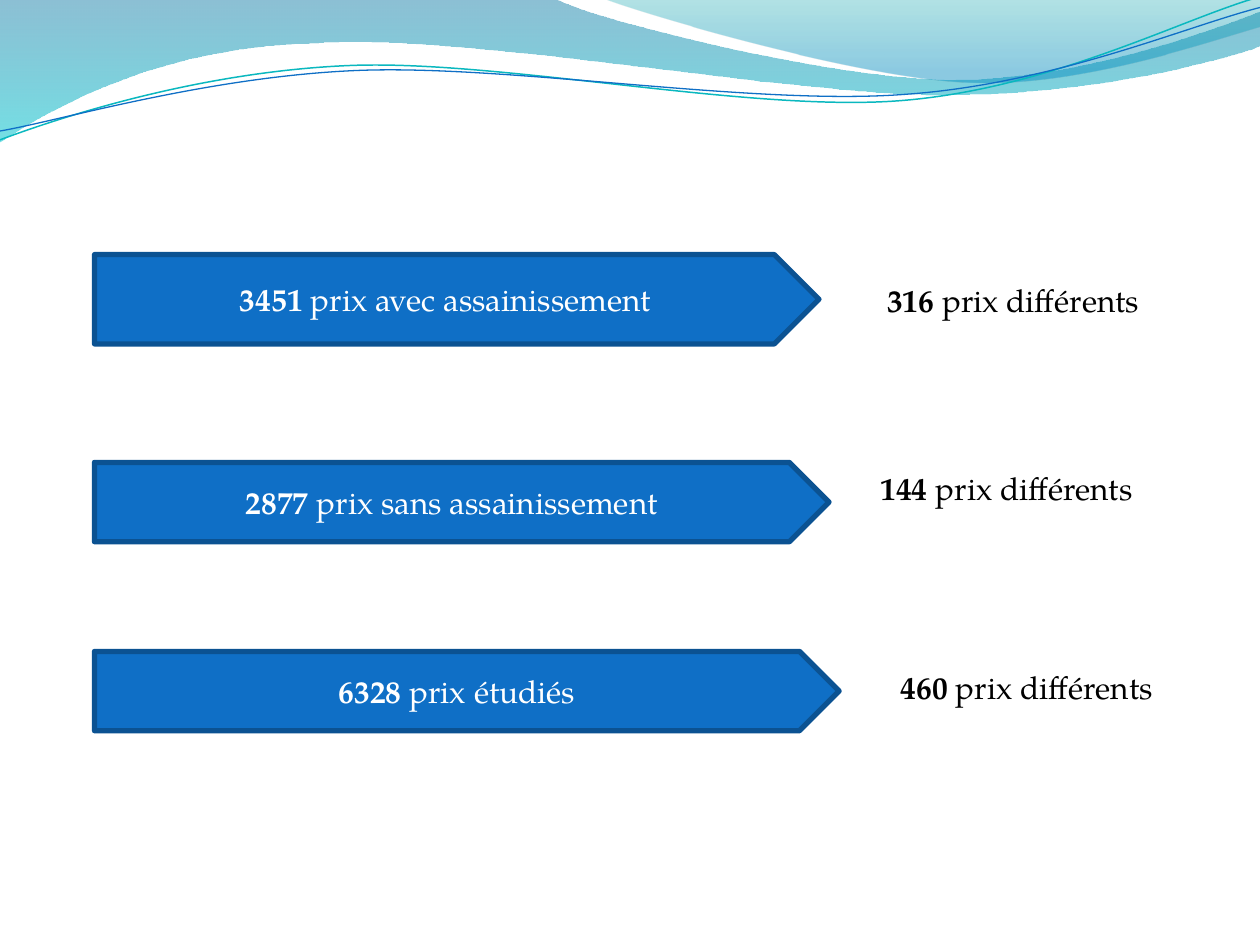
from math import cos, radians, sin

from lxml import etree
from pptx import Presentation
from pptx.dml.color import RGBColor
from pptx.enum.shapes import MSO_SHAPE
from pptx.enum.text import MSO_ANCHOR, MSO_AUTO_SIZE, PP_ALIGN
from pptx.oxml.ns import qn
from pptx.util import Inches, Pt

PENTAGON = MSO_SHAPE.PENTAGON
MIDDLE = MSO_ANCHOR.MIDDLE
GROW = MSO_AUTO_SIZE.SHAPE_TO_FIT_TEXT
CENTER, LEFT = PP_ALIGN.CENTER, PP_ALIGN.LEFT
FONT = "TeX Gyre Pagella"

WAVES = [
    ((0, 0), [
        [(4.4, -0.01)],
        [(4.76, 0.17), (6.64, 0.63), (7.58, 0.63)],
        [(8.53, 0.63), (9.58, 0.26), (10, 0.09)],
        [(10.01, 0.36)],
        [(9.83, 0.44), (8.7, 0.76), (7.46, 0.75)],
        [(6.22, 0.75), (3.82, 0.28), (2.57, 0.34)],
        [(1.29, 0.36), (0.46, 0.83), (-0.01, 1.13)],
    ], [(0, "0074A1", 45), (1, "00C6CF", 55)]),
    ((4.79, -0.01), [
        [(5.09, 0.11), (6.82, 0.62), (7.69, 0.65)],
        [(8.56, 0.69), (9.61, 0.32), (10, 0.21)],
        [(10, 0)],
    ], [(0, "00A1A9", 30), (0.8, "008BBF", 45)]),
]
TILT = -2.7
RIPPLES = [
    ((0, 1.11), [
        [(0.48, 0.93), (1.58, 0.57), (2.77, 0.52)],
        [(3.95, 0.47), (5.93, 0.89), (7.13, 0.8)],
        [(8.33, 0.71), (9.38, 0.15), (9.98, -0.02)],
    ], (4.99, 0.58), "0AB8BF", 0.85),
    ((0, 1.04), [
        [(0.47, 0.96), (1.64, 0.61), (2.83, 0.56)],
        [(4.03, 0.51), (5.97, 0.84), (7.17, 0.75)],
        [(8.36, 0.67), (9.41, 0.21), (10, 0.06)],
    ], (5, 0.59), "0F6FC6", 0.75),
]
ARROW_LEFT = 0.75
RESULT_HEIGHT = 0.4
ROWS = [
    {"arrow": ("3451", " prix avec assainissement"), "top": 2.02, "size": (5.75, 0.71),
     "result": ("316", " prix différents"), "result_at": (6.81, 2.18, 2.68), "inset": 0.23},
    {"arrow": ("2877", " prix sans assainissement"), "top": 3.67, "size": (5.83, 0.63),
     "result": ("144", " prix différents"), "result_at": (6.89, 3.67, 2.2), "inset": 0.1},
    {"arrow": ("6328", " prix étudiés"), "top": 5.17, "size": (5.91, 0.63),
     "result": ("460", " prix différents"), "result_at": (7.05, 5.25, 2.6), "inset": 0.1},
]


def rgb(value):
    return RGBColor.from_string(value)


def turn(point, pivot, degrees):
    angle = radians(degrees)
    dx, dy = point[0] - pivot[0], point[1] - pivot[1]
    return (pivot[0] + dx * cos(angle) - dy * sin(angle),
            pivot[1] + dx * sin(angle) + dy * cos(angle))


def add_outline(slide, start, segments, close):
    points = [start] + [point for segment in segments for point in segment]
    corners = [(Inches(x), Inches(y)) for x, y in points]
    builder = slide.shapes.build_freeform(*corners[0])
    builder.add_line_segments(corners[1:], close=close)
    outline = builder.convert_to_shape()
    outline.shadow.inherit = False
    steps = iter(list(outline._element.iter(qn("a:lnTo"))))
    for segment in segments:
        first, *others = [next(steps) for _ in segment]
        if others:
            first.tag = qn("a:cubicBezTo")
            for step in others:
                first.append(step[0])
                step.getparent().remove(step)
    return outline


def fill_gradient(shape, stops):
    shape.fill.gradient()
    shape.fill.gradient_angle = 270
    for stop, (position, color, _) in zip(shape.fill.gradient_stops, stops):
        stop.position = position
        stop.color.rgb = rgb(color)
    colors = shape._element.spPr.iter(qn("a:srgbClr"))
    for color_element, (_, _, opacity) in zip(colors, stops):
        etree.SubElement(color_element, qn("a:alpha"), val=str(opacity * 1000))


def write(frame, parts, color, align):
    frame.word_wrap = True
    paragraph = frame.paragraphs[0]
    paragraph.alignment = align
    for part, bold in zip(parts, (True, False)):
        run = paragraph.add_run()
        run.text = part
        run.font.name = FONT
        run.font.size = Pt(18)
        run.font.bold = bold
        run.font.color.rgb = rgb(color)


def main():
    deck = Presentation()
    deck.slide_width, deck.slide_height = Inches(10), Inches(7.5)
    slide = deck.slides.add_slide(deck.slide_layouts[6])

    for start, segments, stops in WAVES:
        wave = add_outline(slide, start, segments, True)
        fill_gradient(wave, stops)
        wave.line.fill.background()

    for start, segments, pivot, color, width in RIPPLES:
        level = [[turn(point, pivot, -TILT) for point in segment] for segment in segments]
        ripple = add_outline(slide, turn(start, pivot, -TILT), level, False)
        ripple.rotation = TILT
        ripple.fill.background()
        ripple.line.color.rgb = rgb(color)
        ripple.line.width = Pt(width)

    for row in ROWS:
        box = [Inches(v) for v in (ARROW_LEFT, row["top"], *row["size"])]
        arrow = slide.shapes.add_shape(PENTAGON, *box)
        arrow.shadow.inherit = False
        arrow.fill.solid()
        arrow.fill.fore_color.rgb = rgb("0F6FC6")
        arrow.line.color.rgb = rgb("0B5292")
        arrow.line.width = Pt(3)
        arrow.text_frame.vertical_anchor = MIDDLE
        write(arrow.text_frame, row["arrow"], "FFFFFF", CENTER)

        box = [Inches(v) for v in (*row["result_at"], RESULT_HEIGHT)]
        result = slide.shapes.add_textbox(*box)
        result.text_frame.auto_size = GROW
        result.text_frame.margin_left = Inches(row["inset"])
        write(result.text_frame, row["result"], "000000", LEFT)

    deck.save("out.pptx")


if __name__ == "__main__":
    main()
